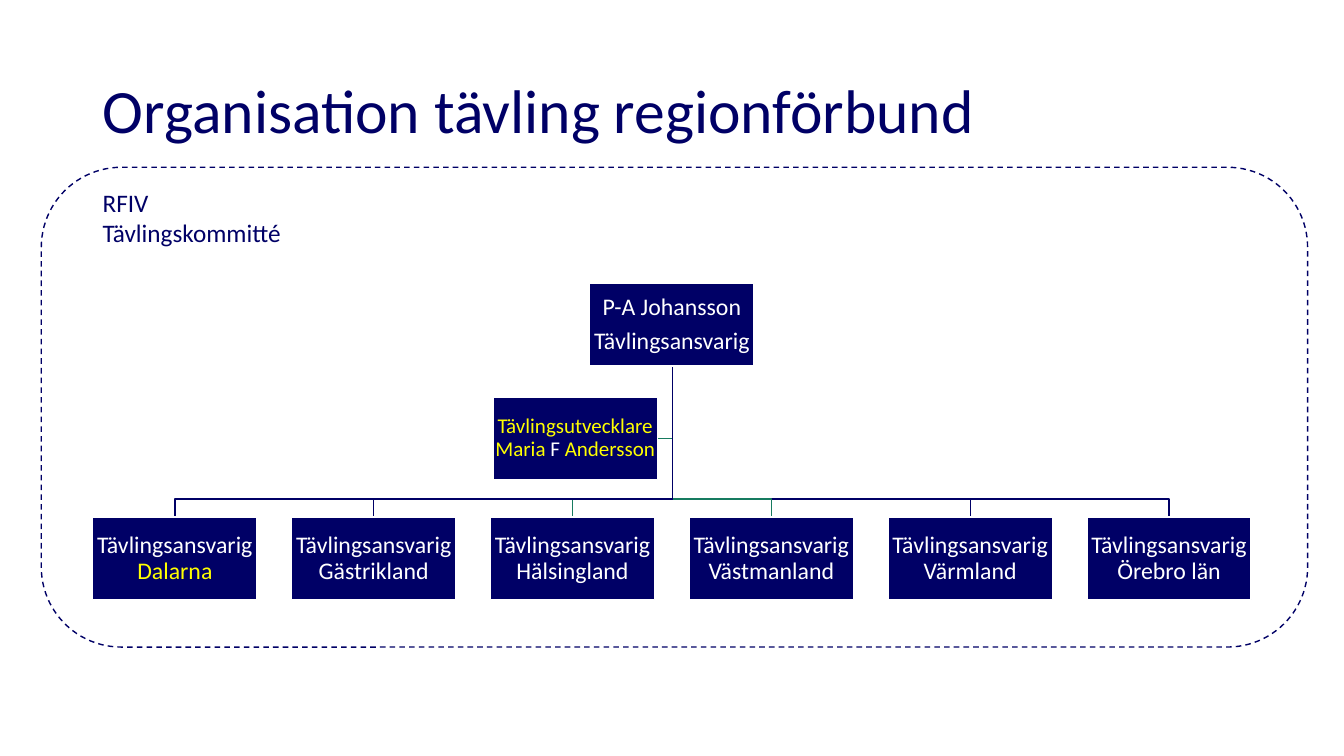
from pptx import Presentation
from pptx.dml.color import RGBColor
from pptx.enum.dml import MSO_LINE
from pptx.enum.shapes import MSO_SHAPE
from pptx.enum.text import MSO_ANCHOR, PP_ALIGN
from pptx.util import Inches, Pt

RECTANGLE = MSO_SHAPE.RECTANGLE
ROUNDED = MSO_SHAPE.ROUNDED_RECTANGLE
DASH = MSO_LINE.DASH
MIDDLE = MSO_ANCHOR.MIDDLE
TOP = MSO_ANCHOR.TOP
CENTER = PP_ALIGN.CENTER
LEFT = PP_ALIGN.LEFT

NAVY = RGBColor(0x00, 0x00, 0x66)
GREEN = RGBColor(0x17, 0x7B, 0x60)
WHITE = RGBColor(0xFF, 0xFF, 0xFF)
YELLOW = RGBColor(0xFF, 0xFF, 0x00)

FONT = "Calibri"
BOX_WIDTH, BOX_HEIGHT = 1.63, 0.82
TRUNK_X, TRUNK_TOP = 6.67, 3.63
BRANCH_Y, REGION_TOP = 4.95, 5.13
REGION_LEFT, REGION_STEP = 0.92, 1.972

REGIONS = [
    ("Dalarna", YELLOW, NAVY),
    ("Gästrikland", WHITE, NAVY),
    ("Hälsingland", WHITE, GREEN),
    ("Västmanland", WHITE, GREEN),
    ("Värmland", WHITE, NAVY),
    ("Örebro län", WHITE, NAVY),
]


def style_paragraph(para, size, color, align):
    para.alignment = align
    para.font.name = FONT
    para.font.size = Pt(size)
    para.font.color.rgb = color


def add_title(page, text):
    title = page.shapes.title
    title.left, title.top = Inches(0.92), Inches(0.4)
    title.width, title.height = Inches(11.5), Inches(1.45)
    frame = title.text_frame
    frame.text = text
    frame.vertical_anchor = MIDDLE
    para = frame.paragraphs[0]
    style_paragraph(para, 44, NAVY, LEFT)
    para.line_spacing = 0.9


def add_path(shapes, points, color):
    corners = [(Inches(x), Inches(y)) for x, y in points]
    builder = shapes.build_freeform(*corners[0])
    builder.add_line_segments(corners[1:], close=False)
    path_line = builder.convert_to_shape()
    path_line.shadow.inherit = False
    path_line.fill.background()
    path_line.line.color.rgb = color
    path_line.line.width = Pt(1)


def add_role_box(shapes, left, top, paragraphs, size=17):
    box = shapes.add_shape(RECTANGLE, Inches(left), Inches(top),
                           Inches(BOX_WIDTH), Inches(BOX_HEIGHT))
    box.shadow.inherit = False
    box.fill.solid()
    box.fill.fore_color.rgb = NAVY
    box.line.color.rgb = WHITE
    box.line.width = Pt(1)
    frame = box.text_frame
    frame.word_wrap = True
    frame.vertical_anchor = MIDDLE
    frame.margin_left = frame.margin_right = Inches(0.01)
    frame.margin_top = frame.margin_bottom = Inches(0.01)
    for index, lines in enumerate(paragraphs):
        para = frame.add_paragraph() if index else frame.paragraphs[0]
        style_paragraph(para, size, WHITE, CENTER)
        para.line_spacing = 0.9
        para.space_after = Pt(6)
        for line_index, line in enumerate(lines):
            if line_index:
                para.add_line_break()
            for text, color in line:
                span = para.add_run()
                span.text = text
                span.font.color.rgb = color


def add_chart_of_roles(page):
    shapes = page.shapes.add_group_shape().shapes
    add_path(shapes, [(TRUNK_X, TRUNK_TOP), (TRUNK_X, 4.35), (6.52, 4.35)], GREEN)
    lefts = [REGION_LEFT + REGION_STEP * index for index in range(len(REGIONS))]
    for left, (_, _, line_color) in reversed(list(zip(lefts, REGIONS))):
        middle = left + BOX_WIDTH / 2
        add_path(shapes, [(TRUNK_X, TRUNK_TOP), (TRUNK_X, BRANCH_Y),
                          (middle, BRANCH_Y), (middle, REGION_TOP)], line_color)
    add_role_box(shapes, 5.85, 2.81, [[[("P-A Johansson", WHITE)]],
                                      [[("Tävlingsansvarig", WHITE)]]])
    for left, (region, text_color, _) in zip(lefts, REGIONS):
        add_role_box(shapes, left, REGION_TOP, [[[("Tävlingsansvarig", WHITE)],
                                                 [(region, text_color)]]])
    developer = [[("Tävlingsutvecklare", YELLOW)],
                 [("Maria", YELLOW), (" F ", WHITE), ("Andersson", YELLOW)]]
    add_role_box(shapes, 4.89, 3.94, [developer], size=15)


def add_committee_frame(page):
    outline = page.shapes.add_shape(ROUNDED, Inches(0.41), Inches(1.66),
                                    Inches(12.56), Inches(4.76))
    outline.shadow.inherit = False
    outline.fill.background()
    outline.line.color.rgb = NAVY
    outline.line.width = Pt(1)
    outline.line.dash_style = DASH


def add_committee_label(page, text):
    label = page.shapes.add_textbox(Inches(0.92), Inches(1.81),
                                    Inches(2.4), Inches(0.71))
    frame = label.text_frame
    frame.word_wrap = True
    frame.vertical_anchor = TOP
    frame.text = text
    style_paragraph(frame.paragraphs[0], 18, NAVY, LEFT)


def main():
    deck = Presentation()
    deck.slide_width, deck.slide_height = Inches(13.33), Inches(7.5)
    page = deck.slides.add_slide(deck.slide_layouts[5])
    add_title(page, "Organisation tävling regionförbund")
    add_chart_of_roles(page)
    add_committee_frame(page)
    add_committee_label(page, "RFIV Tävlingskommitté")
    deck.save("out.pptx")


if __name__ == "__main__":
    main()
